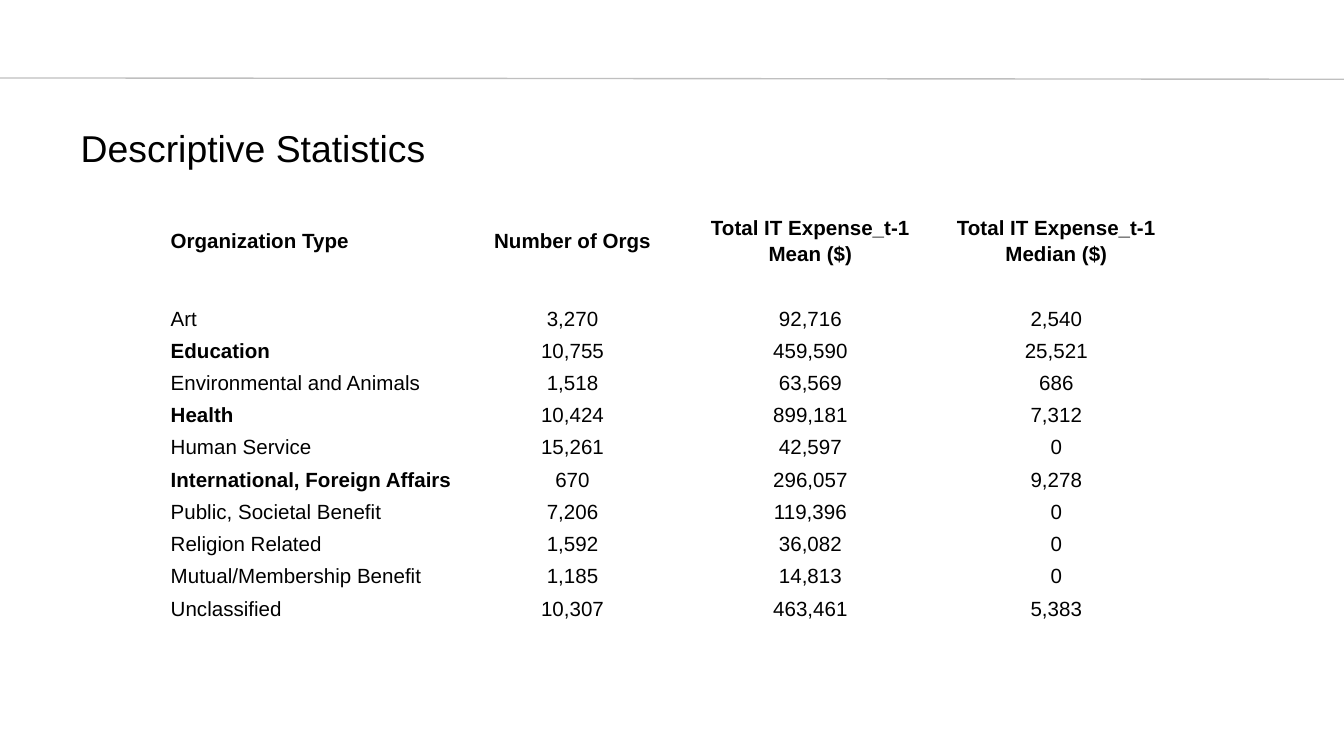
from dataclasses import dataclass

from lxml import etree
from pptx import Presentation
from pptx import util as u
from pptx.dml.color import RGBColor
from pptx.enum import shapes, text
from pptx.oxml.ns import qn


@dataclass(frozen=True)
class Theme:
    font: str = "Arial"
    ink: RGBColor = RGBColor(0x00, 0x00, 0x00)
    rule: RGBColor = RGBColor(0xBF, 0xBF, 0xBF)
    title_size: int = 20
    table_size: int = 11
    line_spacing: float = 1.15


HEADER = ["Organization Type", "Number of Orgs",
          "Total IT Expense_t-1\nMean ($)", "Total IT Expense_t-1\nMedian ($)"]
STATISTICS = [
    ["Art", "3,270", "92,716", "2,540"],
    ["Education", "10,755", "459,590", "25,521"],
    ["Environmental and Animals", "1,518", "63,569", "686"],
    ["Health", "10,424", "899,181", "7,312"],
    ["Human Service", "15,261", "42,597", "0"],
    ["International, Foreign Affairs", "670", "296,057", "9,278"],
    ["Public, Societal Benefit", "7,206", "119,396", "0"],
    ["Religion Related", "1,592", "36,082", "0"],
    ["Mutual/Membership Benefit", "1,185", "14,813", "0"],
    ["Unclassified", "10,307", "463,461", "5,383"],
]
HIGHLIGHTED = {"Education", "Health", "International, Foreign Affairs"}
COLUMN_WIDTHS = [2.19, 1.66, 1.88, 1.78]
HEADER_HEIGHT, ROW_HEIGHT = 0.43, 0.24


class SlideBuilder:
    def __init__(self, slide, theme):
        self.slide = slide
        self.theme = theme

    def add_run(self, paragraph, content, size, bold=False):
        run = paragraph.add_run()
        run.text = content
        run.font.name = self.theme.font
        run.font.size = u.Pt(size)
        run.font.bold = bold
        run.font.color.rgb = self.theme.ink

    def rule(self, start, end):
        line = self.slide.shapes.add_connector(
            shapes.MSO_CONNECTOR.STRAIGHT, *map(u.Inches, start + end))
        line.line.color.rgb = self.theme.rule
        line.line.width = u.Pt(0.75)
        etree.SubElement(line._element.spPr, qn("a:effectLst"))

    def title(self, content, left, top, width, height):
        shape = self.slide.shapes.title
        shape.left, shape.top = u.Inches(left), u.Inches(top)
        shape.width, shape.height = u.Inches(width), u.Inches(height)
        frame = shape.text_frame
        frame.word_wrap = True
        frame.vertical_anchor = text.MSO_ANCHOR.MIDDLE
        paragraph = frame.paragraphs[0]
        paragraph.alignment = text.PP_ALIGN.LEFT
        self.add_run(paragraph, content, self.theme.title_size)

    def cell(self, cell, content, alignment, bold):
        cell.fill.background()
        cell.vertical_anchor = text.MSO_ANCHOR.MIDDLE
        cell.margin_left = cell.margin_right = u.Inches(0.03)
        cell.margin_top = cell.margin_bottom = u.Inches(0.02)
        frame = cell.text_frame
        for index, line in enumerate(content.split("\n")):
            paragraph = frame.add_paragraph() if index else frame.paragraphs[0]
            paragraph.alignment = alignment
            paragraph.line_spacing = self.theme.line_spacing
            if line:
                self.add_run(paragraph, line, self.theme.table_size, bold)
            else:  # keeps an empty row from growing to the default type size
                etree.SubElement(paragraph._p, qn("a:endParaRPr"),
                                 sz=str(self.theme.table_size * 100))

    def table(self, rows, left, top):
        heights = [HEADER_HEIGHT] + [ROW_HEIGHT] * (len(rows) - 1)
        table = self.slide.shapes.add_table(
            len(rows), len(COLUMN_WIDTHS), u.Inches(left), u.Inches(top),
            u.Inches(sum(COLUMN_WIDTHS)), u.Inches(sum(heights))).table
        table.horz_banding = table.first_row = False
        for column, width in zip(table.columns, COLUMN_WIDTHS):
            column.width = u.Inches(width)
        for r, (values, height) in enumerate(zip(rows, heights)):
            table.rows[r].height = u.Inches(height)
            for c, value in enumerate(values):
                alignment = text.PP_ALIGN.CENTER if c else text.PP_ALIGN.LEFT
                bold = r == 0 or value in HIGHLIGHTED
                self.cell(table.cell(r, c), value, alignment, bold)


def main():
    # Widescreen 16:9 page
    presentation = Presentation()
    presentation.slide_width = u.Inches(10)
    presentation.slide_height = u.Inches(10 * 9 / 16)
    slide = presentation.slides.add_slide(presentation.slide_layouts[5])
    builder = SlideBuilder(slide, Theme())

    # Header rule and title
    builder.rule((0, 0.58), (10, 0.59))
    builder.title("Descriptive Statistics", 0.5, 0.77, 9, 0.66)

    # Statistics table, with a blank row under the header
    spacer = [""] * len(HEADER)
    builder.table([HEADER, spacer] + STATISTICS, 1.24, 1.57)

    presentation.save("out.pptx")


if __name__ == "__main__":
    main()
